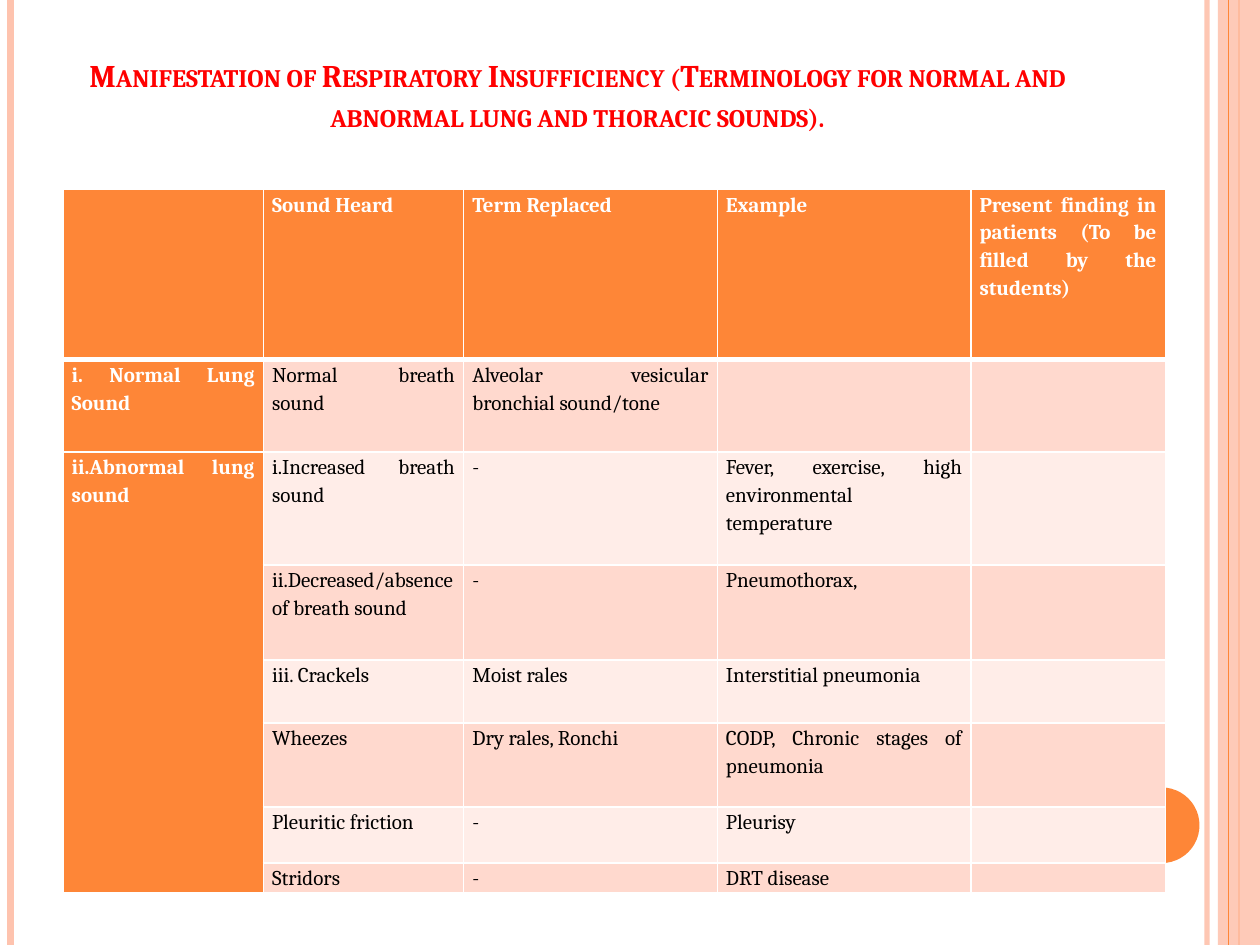
"""Build a slide with a table of lung sound terminology."""
from dataclasses import dataclass
from typing import Optional

from lxml import etree
from pptx import Presentation
from pptx import util as u
from pptx.dml.color import RGBColor
from pptx.enum import shapes, text
from pptx.oxml.ns import qn

FONT = "Cambria"
COLORS = {
    "orange": "FE8637",
    "peach": "FEC3AE",
    "band_dark": "FFD9CE",
    "band_light": "FFEDE8",
    "red": "FF0000",
    "white": "FFFFFF",
    "black": "000000",
}
WIDTH, HEIGHT = 720, 540
TITLE = ("Manifestation of Respiratory Insufficiency "
         "(Terminology for normal and abnormal lung and thoracic sounds).")
COLUMN_WIDTHS = [114.5, 114.5, 144.9, 144.9, 111.2]
ROW_HEIGHTS = [97.2, 52.8, 64.5, 54.4, 36, 48, 32, 17]
ROWS = [
    ["", "Sound Heard", "Term Replaced", "Example",
     "Present finding in patients (To be filled by the students)"],
    ["i. Normal Lung Sound", "Normal breath sound",
     "Alveolar vesicular bronchial sound/tone", "", ""],
    ["ii.Abnormal lung sound", "i.Increased breath sound", "-",
     "Fever, exercise, high environmental temperature", ""],
    ["", "ii.Decreased/absence of breath sound", "-", "Pneumothorax,", ""],
    ["", "iii. Crackels", "Moist rales", "Interstitial pneumonia", ""],
    ["", "Wheezes", "Dry rales, Ronchi", "CODP, Chronic stages of pneumonia", ""],
    ["", "Pleuritic friction", "-", "Pleurisy", ""],
    ["", "Stridors", "-", "DRT disease", ""],
]


@dataclass
class Stripe:
    x: float
    weight: float
    color: str
    opacity: Optional[int] = None


@dataclass
class Block:
    kind: shapes.MSO_SHAPE
    left: float
    top: float
    width: float
    height: float
    color: str
    opacity: Optional[int] = None


DECORATION = [
    Stripe(689.76, 3, "peach", 93),
    Stripe(6, 4.5, "peach"),
    Stripe(708, 1.5, "orange"),
    Block(shapes.MSO_SHAPE.RECTANGLE, 696, 0, 24, HEIGHT, "peach", 87),
    Stripe(702, 0.75, "orange"),
    Block(shapes.MSO_SHAPE.OVAL, 642.24, 450, 43.2, 43.2, "orange"),
]


def rgb(name: str) -> RGBColor:
    return RGBColor.from_string(COLORS[name])


def set_opacity(element, percent: Optional[int]) -> None:
    if percent is not None:
        color = next(element.iter(qn("a:srgbClr")))
        etree.SubElement(color, qn("a:alpha"), val=str(percent * 1000))


def draw_stripe(slide, stripe: Stripe) -> None:
    x = u.Pt(stripe.x)
    line = slide.shapes.add_connector(
        shapes.MSO_CONNECTOR.STRAIGHT, x, 0, x, u.Pt(HEIGHT))
    line.line.color.rgb = rgb(stripe.color)
    line.line.width = u.Pt(stripe.weight)
    properties = line._element.spPr
    set_opacity(properties, stripe.opacity)
    etree.SubElement(properties, qn("a:effectLst"))


def draw_block(slide, block: Block) -> None:
    bounds = (block.left, block.top, block.width, block.height)
    shape = slide.shapes.add_shape(block.kind, *map(u.Pt, bounds))
    shape.shadow.inherit = False
    shape.fill.solid()
    shape.fill.fore_color.rgb = rgb(block.color)
    shape.line.fill.background()
    set_opacity(shape._element.spPr, block.opacity)


def add_run(paragraph, content: str, size: float, color: str, bold: bool):
    run = paragraph.add_run()
    run.text = content
    run.font.name = FONT
    run.font.size = u.Pt(size)
    run.font.bold = bold
    run.font.color.rgb = rgb(color)
    return run


def format_title(slide) -> None:
    title = slide.shapes.title
    title.left, title.top = u.Pt(36), u.Pt(21.6)
    title.width, title.height = u.Pt(588), u.Pt(90)
    frame = title.text_frame
    frame.word_wrap = True
    frame.auto_size = text.MSO_AUTO_SIZE.NONE
    frame.vertical_anchor = text.MSO_ANCHOR.BOTTOM
    frame.margin_bottom = u.Pt(35)
    paragraph = frame.paragraphs[0]
    paragraph.alignment = text.PP_ALIGN.CENTER
    paragraph.line_spacing = u.Pt(23)
    run = add_run(paragraph, TITLE, 18, "red", True)
    run.font._element.set("cap", "small")


def add_borders(cell, row: int) -> None:
    weights = {"lnL": 1, "lnR": 1, "lnT": 3 if row == 1 else 1,
               "lnB": 3 if row == 0 else 1}
    properties = cell._tc.get_or_add_tcPr()
    for tag, weight in weights.items():
        line = etree.SubElement(properties, qn(f"a:{tag}"), w=str(u.Pt(weight)))
        fill = etree.SubElement(line, qn("a:solidFill"))
        etree.SubElement(fill, qn("a:srgbClr"), val=COLORS["white"])


def format_cell(cell, row: int, column: int, content: str) -> None:
    heading = row == 0 or column == 0
    band = "band_dark" if row % 2 else "band_light"
    cell.margin_left = cell.margin_right = u.Pt(5)
    cell.margin_top = cell.margin_bottom = 0
    add_borders(cell, row)
    cell.fill.solid()
    cell.fill.fore_color.rgb = rgb("orange" if heading else band)
    paragraph = cell.text_frame.paragraphs[0]
    paragraph.alignment = text.PP_ALIGN.JUSTIFY
    paragraph.line_spacing = 1.15
    paragraph.space_after = u.Pt(10)
    if content:
        add_run(paragraph, content, 12, "white" if heading else "black", heading)
    else:
        etree.SubElement(paragraph._p, qn("a:endParaRPr"), sz="1200")


def draw_table(slide) -> None:
    frame = slide.shapes.add_table(
        len(ROWS), len(COLUMN_WIDTHS), u.Pt(36), u.Pt(108.4),
        u.Pt(sum(COLUMN_WIDTHS)), u.Pt(sum(ROW_HEIGHTS)))
    table = frame.table
    table.first_row = table.horz_banding = False
    for column, width in zip(table.columns, COLUMN_WIDTHS):
        column.width = u.Pt(width)
    for row, height in zip(table.rows, ROW_HEIGHTS):
        row.height = u.Pt(height)
    for row, contents in enumerate(ROWS):
        for column, content in enumerate(contents):
            format_cell(table.cell(row, column), row, column, content)
    table.cell(2, 0).merge(table.cell(len(ROWS) - 1, 0))


def main() -> None:
    presentation = Presentation()
    presentation.slide_width, presentation.slide_height = u.Pt(WIDTH), u.Pt(HEIGHT)
    slide = presentation.slides.add_slide(presentation.slide_layouts[5])
    for item in DECORATION:
        if isinstance(item, Stripe):
            draw_stripe(slide, item)
        else:
            draw_block(slide, item)
    format_title(slide)
    draw_table(slide)
    presentation.save("out.pptx")


if __name__ == "__main__":
    main()
